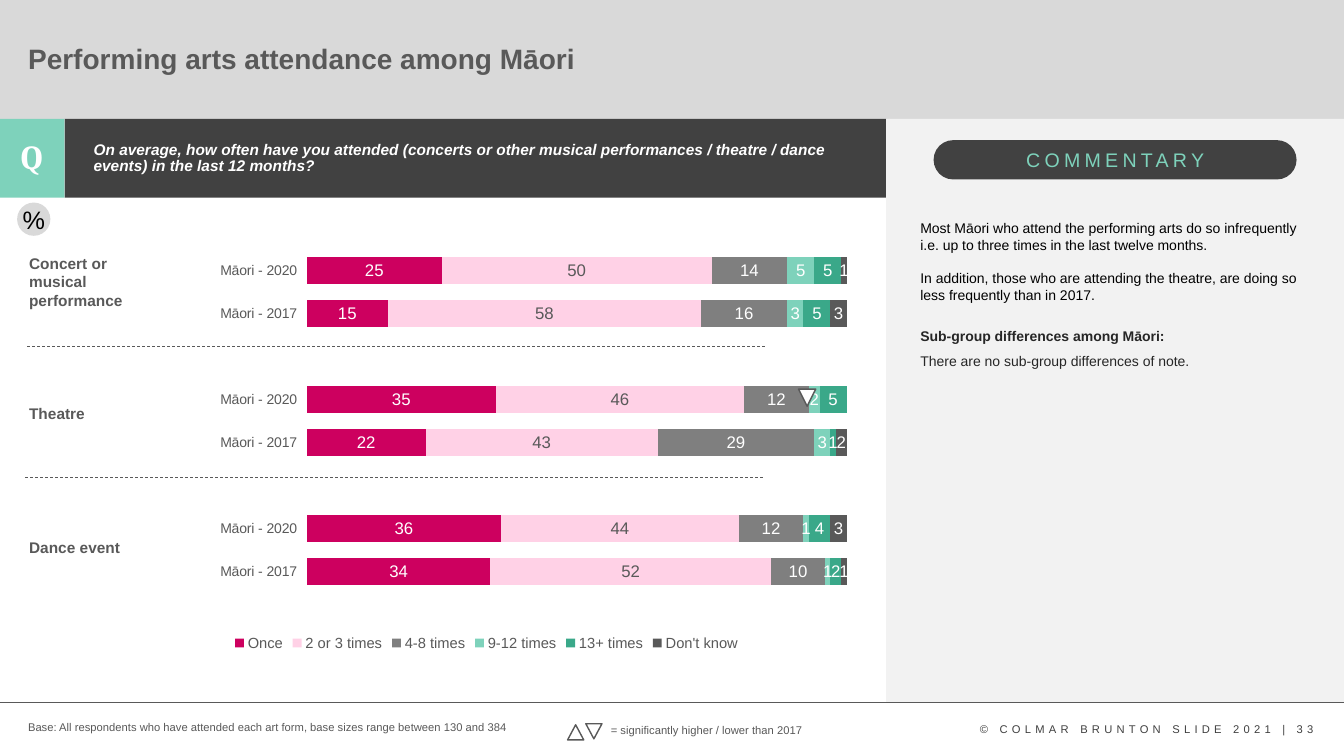
from dataclasses import dataclass

from lxml import etree
from pptx import Presentation
from pptx.chart.data import CategoryChartData
from pptx.dml.color import RGBColor
from pptx.enum.chart import XL_CHART_TYPE, XL_LABEL_POSITION, XL_LEGEND_POSITION, XL_TICK_MARK
from pptx.enum.dml import MSO_LINE
from pptx.enum.shapes import MSO_CONNECTOR, MSO_SHAPE
from pptx.enum.text import MSO_ANCHOR, PP_ALIGN
from pptx.oxml.ns import qn
from pptx.util import Inches, Pt

RECT, ROUND, OVAL, TRIANGLE = (MSO_SHAPE.RECTANGLE, MSO_SHAPE.ROUNDED_RECTANGLE,
                               MSO_SHAPE.OVAL, MSO_SHAPE.ISOSCELES_TRIANGLE)
CENTER, MIDDLE, DASH = PP_ALIGN.CENTER, MSO_ANCHOR.MIDDLE, MSO_LINE.DASH


@dataclass(frozen=True)
class Theme:
    font: str = "Arial"
    serif: str = "Cambria"
    white: str = "FFFFFF"
    black: str = "000000"
    ink: str = "262626"
    dark: str = "414141"
    footer: str = "404040"
    grey: str = "595959"
    mid: str = "7F7F7F"
    band: str = "D9D9D9"
    panel: str = "F2F2F2"
    mint: str = "7ED2BB"
    green: str = "3AA889"
    pink: str = "CD005F"
    pale: str = "FFD1E6"
    title: float = 20
    icon: float = 24
    percent: float = 18
    heading: float = 14
    value: float = 12
    label: float = 11
    legend: float = 10.5
    body: float = 10
    small: float = 8


T = Theme()

# Answer, fill, label colour, and values from the bottom bar up
YEARS = ["Māori - 2017", "Māori - 2020"]
CATEGORIES = YEARS + [""] + YEARS + [""] + YEARS
ANSWERS = [
    ("Once", T.pink, T.white, [34, 36, None, 22, 35, None, 15, 25]),
    ("2 or 3 times", T.pale, T.grey, [52, 44, None, 43, 46, None, 58, 50]),
    ("4-8 times", T.mid, T.white, [10, 12, None, 29, 12, None, 16, 14]),
    ("9-12 times", T.mint, T.white, [1, 1, None, 3, 2, None, 3, 5]),
    ("13+ times", T.green, T.white, [2, 4, None, 1, 5, None, 5, 5]),
    ("Don't know", T.grey, T.white, [1, 3, None, 2, 0, None, 3, 1]),
]


def style(font, size, color, **extra):
    for key, val in {"name": T.font, "size": Pt(size), **extra}.items():
        setattr(font, key, val)
    font.color.rgb = RGBColor.from_string(color)


def write(p, text, size, color, spacing=None, para=None, **extra):
    for key, val in (para or {}).items():
        setattr(p, key, val)
    r = p.add_run()
    r.text = text
    style(r.font, size, color, **extra)
    if spacing:
        r._r.get_or_add_rPr().set("spc", str(spacing * 100))


def add_text(shapes, box, text, size, color, wrap=True, anchor=MSO_ANCHOR.TOP, **fmt):
    tf = shapes.add_textbox(*map(Inches, box)).text_frame
    tf.word_wrap, tf.vertical_anchor = wrap, anchor
    write(tf.paragraphs[0], text, size, color, **fmt)
    return tf


def add_block(shapes, kind, box, fill, line=None, rotation=0):
    sp = shapes.add_shape(kind, *map(Inches, box))
    sp.shadow.inherit = False
    sp.rotation = rotation
    sp.fill.solid()
    sp.fill.fore_color.rgb = RGBColor.from_string(fill)
    if line:
        sp.line.color.rgb = RGBColor.from_string(line)
        sp.line.width = Pt(1)
    else:
        sp.line.fill.background()
    return sp


def add_rule(shapes, x, y, w, dash=None):
    cx = shapes.add_connector(MSO_CONNECTOR.STRAIGHT, *map(Inches, (x, y, x + w, y)))
    cx.line.color.rgb = RGBColor.from_string(T.grey)
    cx.line.width = Pt(0.5)
    cx.line.dash_style = dash
    etree.SubElement(cx._element.spPr, qn("a:effectLst"))


def set_layout(parent, index, inner=False, **edges):
    for old in parent.findall(qn("c:layout")):
        parent.remove(old)
    layout = etree.Element(qn("c:layout"))
    manual = etree.SubElement(layout, qn("c:manualLayout"))
    values = {"layoutTarget": "inner"} if inner else {}
    values.update(xMode="edge", yMode="edge", **edges)
    for key, val in values.items():
        etree.SubElement(manual, qn("c:" + key)).set("val", str(val))
    parent.insert(index, layout)


def header(s, box):
    x, y, w, h = box
    add_block(s.shapes, RECT, box, T.band)
    add_text(s.shapes, (x + 0.18, y + 0.23, 11.19, 0.78), "Performing arts attendance among Māori",
             T.title, T.grey, anchor=MIDDLE, bold=True, para={"line_spacing": 0.9})


def question(s, box):
    x, y, w, h = box
    icon = 0.64
    add_block(s.shapes, RECT, (x + icon, y, w - icon, h), T.dark)
    add_block(s.shapes, RECT, (x, y, icon, h), T.mint)
    add_text(s.shapes, (x + 0.08, y + 0.12, 0.47, 0.5), "Q", T.icon, T.white,
             name=T.serif, bold=True, para={"alignment": CENTER})
    add_text(s.shapes, (x + 0.83, y + 0.18, 7.6, 0.46),
             "On average, how often have you attended (concerts or other musical performances "
             "/ theatre / dance events) in the last 12 months?",
             T.label, T.white, bold=True, italic=True, para={"line_spacing": 0.9})


def attendance_chart(s, box):
    data = CategoryChartData()
    data.categories = CATEGORIES
    for name, _, _, values in ANSWERS:
        data.add_series(name, values)
    chart = s.shapes.add_chart(XL_CHART_TYPE.BAR_STACKED_100, *map(Inches, box), data).chart
    chart.has_title = False
    style(chart.font, T.body, T.black)

    plot = chart.plots[0]
    plot.gap_width, plot.overlap, plot.vary_by_categories = 60, 100, False
    for ser, (_, fill, color, _) in zip(plot.series, ANSWERS):
        ser.format.fill.solid()
        ser.format.fill.fore_color.rgb = RGBColor.from_string(fill)
        labels = ser.data_labels
        formats = {"show_value": True, "position": XL_LABEL_POSITION.CENTER,
                   "number_format": "0;;", "number_format_is_linked": False}
        for key, val in formats.items():
            setattr(labels, key, val)
        style(labels.font, T.value, color)

    axis = chart.category_axis
    axis.major_tick_mark = XL_TICK_MARK.OUTSIDE
    axis.format.line.fill.background()
    style(axis.tick_labels.font, T.body, T.grey)
    chart.value_axis.visible = False
    chart.value_axis.has_major_gridlines = False

    chart.has_legend = True
    chart.legend.position = XL_LEGEND_POSITION.BOTTOM
    chart.legend.include_in_layout = False
    style(chart.legend.font, T.legend, T.grey)
    set_layout(chart.legend._element, 1, x=0.12, y=0.88)
    set_layout(chart._chartSpace.chart.plotArea, 0, inner=True, x=0.227, y=0.114, w=0.753, h=0.691)


def results(s, box):
    x, y, w, h = box
    attendance_chart(s, (x + 1.43, y - 0.05, 7.11, 4.94))
    # Art forms and the rules between them
    for name, top, height in [("Concert or musical performance", 0.51, 0.66),
                              ("Theatre", 2, 0.29), ("Dance event", 3.33, 0.29)]:
        add_text(s.shapes, (x + 0.19, y + top, 1.41, height), name, T.label, T.grey, bold=True)
    for left, top in [(0.27, 1.48), (0.25, 2.78)]:
        add_rule(s.shapes, x + left, y + top, 7.32, DASH)
    # Unit badge and significance marker
    tf = add_block(s.shapes, OVAL, (x + 0.17, y + 0.05, 0.33, 0.33), T.band).text_frame
    for key in ("margin_left", "margin_top", "margin_right", "margin_bottom"):
        setattr(tf, key, 0)
    tf.word_wrap, tf.vertical_anchor = False, MIDDLE
    write(tf.paragraphs[0], "%", T.percent, T.black, para={"alignment": CENTER})
    add_block(s.shapes, TRIANGLE, (x + 7.92, y + 1.9, 0.17, 0.17), T.white, T.grey, 180)


def commentary(s, box):
    x, y, w, h = box
    add_block(s.shapes, RECT, box, T.panel)
    add_block(s.shapes, ROUND, (x + 0.47, y + 0.21, 3.6, 0.39), T.dark).adjustments[0] = 0.5
    add_text(s.shapes, (x + 1.29, y + 0.24, 2.02, 0.34), "COMMENTARY", T.heading, T.mint,
             wrap=False, spacing=3)
    tf = add_text(s.shapes, (x + 0.24, y + 0.95, 4.03, 1.87),
                  "Most Māori who attend the performing arts do so infrequently i.e. up to three "
                  "times in the last twelve months.", T.body, T.black)
    for text, color, bold, gap in [
            ("In addition, those who are attending the theatre, are doing so less frequently "
             "than in 2017.", T.black, False, 11.5),
            ("Sub-group differences among Māori:", T.ink, True, 17.5),
            ("There are no sub-group differences of note.", T.ink, False, 6)]:
        write(tf.add_paragraph(), text, T.body, color, bold=bold, para={"space_before": Pt(gap)})


def footer(s, box):
    x, y, w, h = box
    add_rule(s.shapes, x, y, w)
    add_text(s.shapes, (x + 0.18, y + 0.13, 5.07, 0.24),
             "Base: All respondents who have attended each art form, base sizes range between "
             "130 and 384", T.small, T.grey)
    add_text(s.shapes, (x + 9.62, y + 0.15, 3.61, 0.24), "© COLMAR BRUNTON SLIDE 2021 | 33",
             T.small, T.footer, spacing=3)
    # Significance key
    key = s.shapes.add_group_shape().shapes
    add_text(key, (x + 5.96, y + 0.16, 2.13, 0.24), "= significantly higher / lower than 2017",
             T.small, T.grey, wrap=False)
    for left, top, turn in [(5.63, 0.22, 0), (5.81, 0.21, 180)]:
        add_block(key, TRIANGLE, (x + left, y + top, 0.16, 0.15), T.white, T.grey, turn)


def main():
    prs = Presentation()
    prs.slide_width, prs.slide_height = Inches(13.33), Inches(7.5)
    s = prs.slides.add_slide(prs.slide_layouts[6])
    header(s, (0, -0.02, 13.33, 1.2))
    question(s, (0, 1.18, 8.79, 0.78))
    commentary(s, (8.79, 1.18, 4.54, 5.79))
    results(s, (0, 1.96, 8.79, 5.01))
    footer(s, (0, 6.97, 13.33, 0.53))
    prs.save("out.pptx")


if __name__ == "__main__":
    main()
